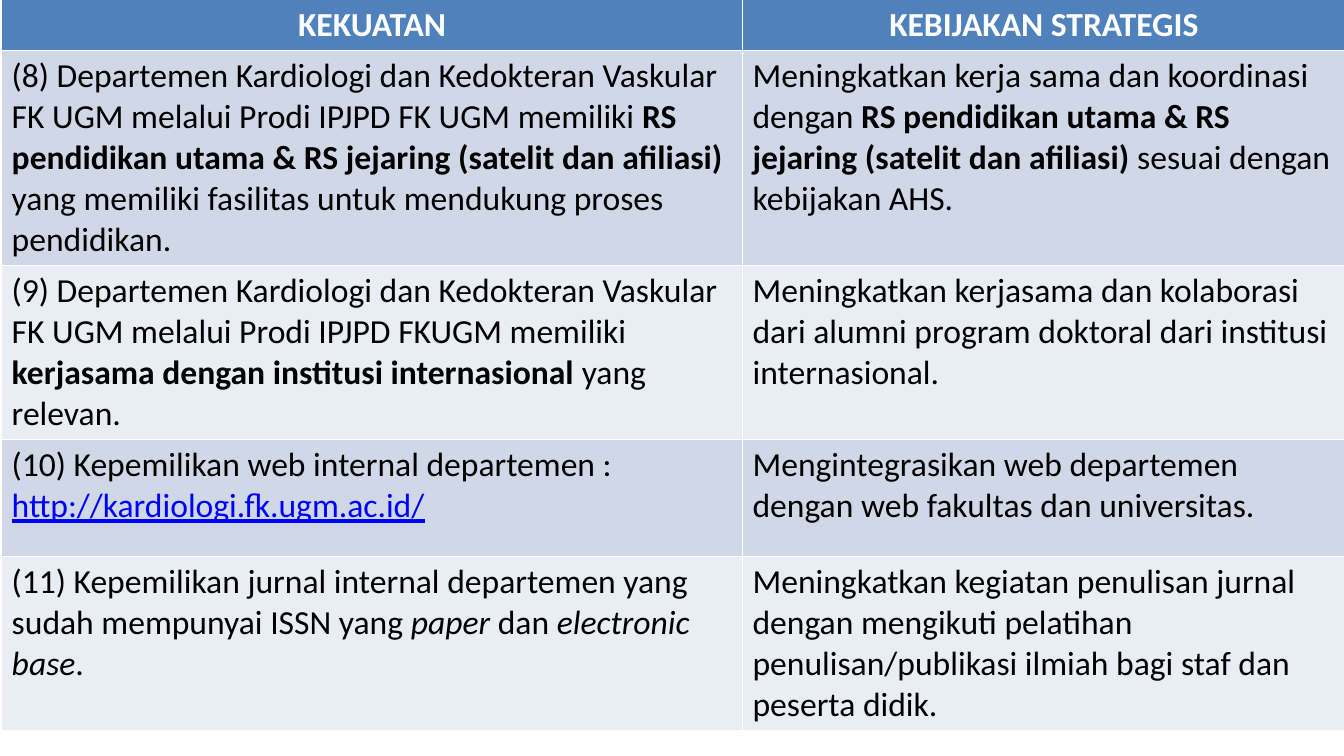
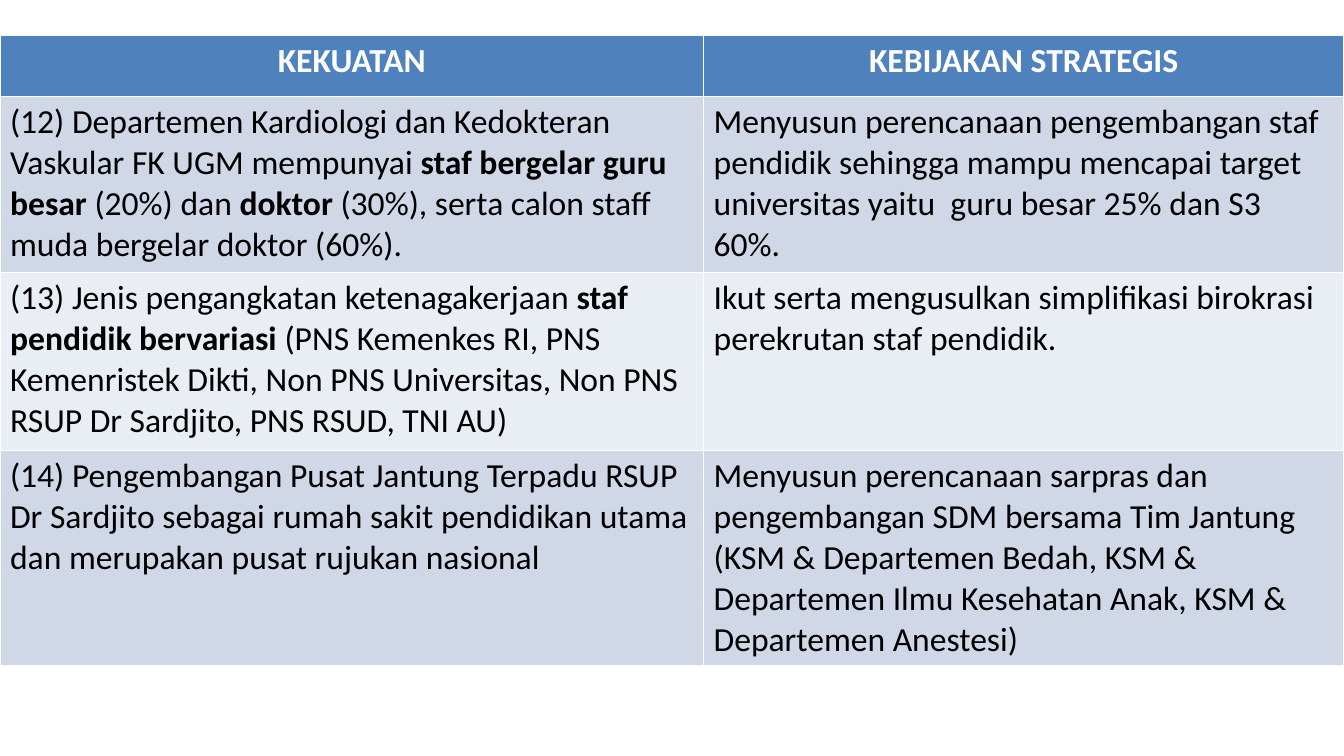
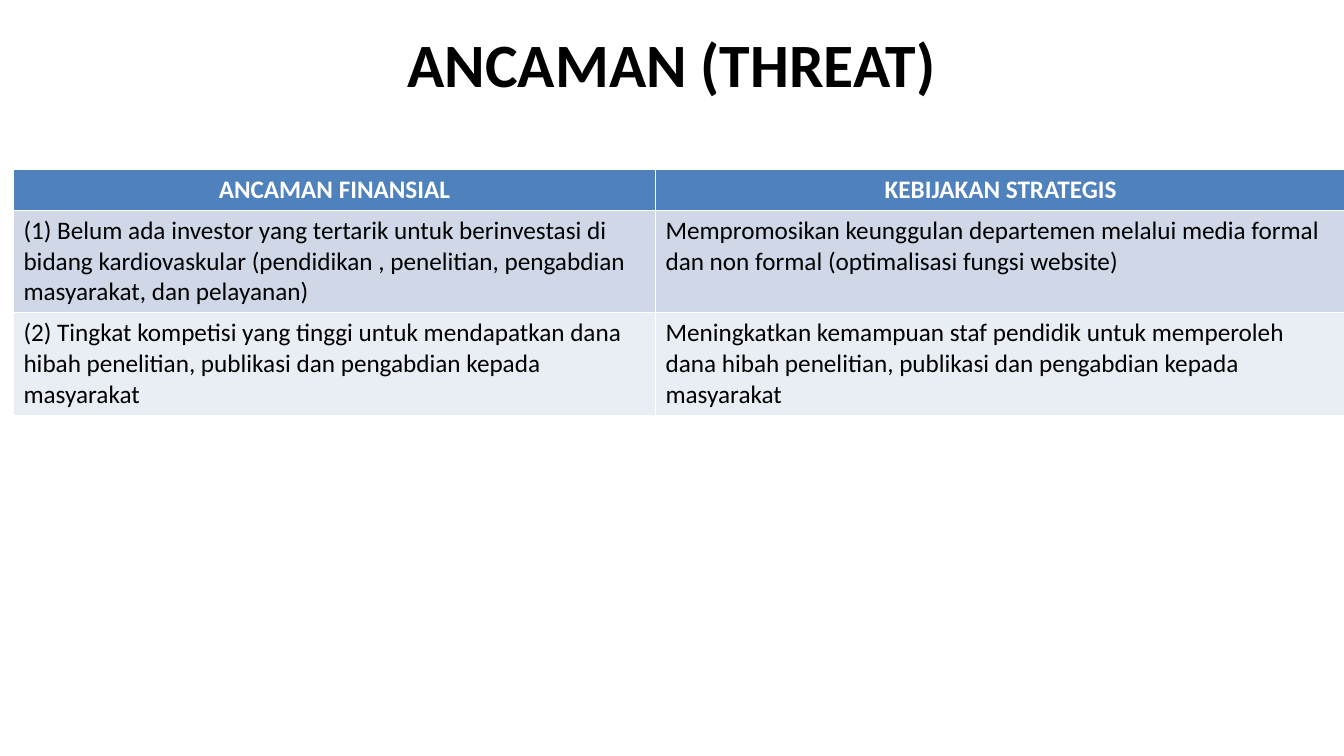
from dataclasses import dataclass

from pptx import Presentation
from pptx.dml.color import RGBColor
from pptx.enum.text import MSO_ANCHOR, PP_ALIGN
from pptx.util import Pt


@dataclass(frozen=True)
class Theme:
    font: str = "Calibri"
    title_size: int = 44
    large_size: int = 24
    small_size: int = 18
    header: RGBColor = RGBColor.from_string("4F81BD")
    bands: tuple = (RGBColor.from_string("D0D8E8"), RGBColor.from_string("E9EDF4"))
    text: RGBColor = RGBColor.from_string("000000")
    header_text: RGBColor = RGBColor.from_string("FFFFFF")
    link: RGBColor = RGBColor.from_string("0000FF")


@dataclass(frozen=True)
class Span:
    text: str
    bold: bool = False
    italic: bool = False
    link: bool = False


def bold(text):
    return Span(text, bold=True)


def italic(text):
    return Span(text, italic=True)


class Deck:
    def __init__(self, theme):
        self.theme = theme
        self.presentation = Presentation()
        self.presentation.slide_width = Pt(960)
        self.presentation.slide_height = Pt(540)
        self.slide = None

    def add_slide(self, title=None):
        layouts = self.presentation.slide_layouts
        layout = layouts.get_by_name("Title Only" if title else "Blank")
        self.slide = self.presentation.slides.add_slide(layout)
        if title:
            self.add_title(title)

    def add_title(self, text):
        shape = self.slide.shapes.title
        shape.left, shape.top, shape.width, shape.height = Pt(48), Pt(0), Pt(864), Pt(90)
        shape.text_frame.vertical_anchor = MSO_ANCHOR.MIDDLE
        self.fill_text(shape.text_frame, text, self.theme.title_size,
                       self.theme.text, True, PP_ALIGN.CENTER)

    def fill_text(self, text_frame, content, size, color, is_bold=False,
                  align=PP_ALIGN.LEFT):
        paragraph = text_frame.paragraphs[0]
        paragraph.alignment = align
        font = paragraph.font
        font.name, font.size, font.bold = self.theme.font, Pt(size), is_bold
        font.color.rgb = color
        for part in (content,) if isinstance(content, str) else content:
            span = Span(part) if isinstance(part, str) else part
            run = paragraph.add_run()
            run.text = span.text
            if span.bold:
                run.font.bold = True
            if span.italic:
                run.font.italic = True
            if span.link:
                run.font.underline = True
                run.font.color.rgb = self.theme.link

    def add_table(self, left, top, widths, heights, rows, size):
        frame = self.slide.shapes.add_table(
            len(rows), len(widths), Pt(left), Pt(top), Pt(sum(widths)), Pt(sum(heights)))
        table = frame.table
        for column, width in zip(table.columns, widths):
            column.width = Pt(width)
        for index, (row, height, contents) in enumerate(zip(table.rows, heights, rows)):
            row.height = Pt(height)
            for cell, content in zip(row.cells, contents):
                cell.fill.solid()
                if index == 0:
                    cell.fill.fore_color.rgb = self.theme.header
                    self.fill_text(cell.text_frame, content, size,
                                   self.theme.header_text, True, PP_ALIGN.CENTER)
                else:
                    cell.fill.fore_color.rgb = self.theme.bands[(index - 1) % 2]
                    self.fill_text(cell.text_frame, content, size, self.theme.text)


STRATEGY = "KEBIJAKAN STRATEGIS"
STRENGTH_HEADER = ("KEKUATAN", STRATEGY)
HOSPITALS = bold("RS pendidikan utama & RS jejaring (satelit dan afiliasi)")

FACILITY_ROWS = [
    STRENGTH_HEADER,
    (("(8) Departemen Kardiologi dan Kedokteran Vaskular FK UGM melalui Prodi IPJPD "
      "FK UGM memiliki ", HOSPITALS,
      " yang memiliki fasilitas untuk mendukung proses pendidikan."),
     ("Meningkatkan kerja sama dan koordinasi dengan ", HOSPITALS,
      " sesuai dengan kebijakan AHS.")),
    (("(9) Departemen Kardiologi dan Kedokteran Vaskular FK UGM melalui Prodi IPJPD "
      "FKUGM memiliki ", bold("kerjasama dengan institusi internasional"),
      " yang relevan."),
     "Meningkatkan kerjasama dan kolaborasi dari alumni program doktoral dari "
     "institusi internasional."),
    (("(10) Kepemilikan web internal departemen : ",
      Span("http://kardiologi.fk.ugm.ac.id/", link=True)),
     "Mengintegrasikan web departemen dengan web fakultas dan universitas."),
    (("(11) Kepemilikan jurnal internal departemen yang sudah mempunyai ISSN yang ",
      italic("paper"), " dan ", italic("electronic base"), "."),
     "Meningkatkan kegiatan penulisan jurnal dengan mengikuti pelatihan "
     "penulisan/publikasi ilmiah bagi staf dan peserta didik."),
]

STAFF_ROWS = [
    STRENGTH_HEADER,
    (("(12) Departemen Kardiologi dan Kedokteran Vaskular FK UGM mempunyai ",
      bold("staf bergelar guru besar"), " (20%) dan ", bold("doktor"),
      " (30%), serta calon staff muda bergelar doktor (60%)."),
     "Menyusun perencanaan pengembangan staf pendidik sehingga mampu mencapai target "
     "universitas yaitu  guru besar 25% dan S3 60%."),
    (("(13) Jenis pengangkatan ketenagakerjaan ", bold("staf pendidik bervariasi"),
      " (PNS Kemenkes RI, PNS Kemenristek Dikti, Non PNS Universitas, Non PNS RSUP "
      "Dr Sardjito, PNS RSUD, TNI AU)"),
     "Ikut serta mengusulkan simplifikasi birokrasi perekrutan staf pendidik."),
    ("(14) Pengembangan Pusat Jantung Terpadu RSUP Dr Sardjito sebagai rumah sakit "
     "pendidikan utama dan merupakan pusat rujukan nasional",
     "Menyusun perencanaan sarpras dan pengembangan SDM bersama Tim Jantung (KSM & "
     "Departemen Bedah, KSM & Departemen Ilmu Kesehatan Anak, KSM & Departemen "
     "Anestesi)"),
]

THREAT_ROWS = [
    ("ANCAMAN FINANSIAL", STRATEGY),
    ("(1) Belum ada investor yang tertarik untuk berinvestasi di bidang kardiovaskular "
     "(pendidikan , penelitian, pengabdian masyarakat, dan pelayanan)",
     "Mempromosikan keunggulan departemen melalui media formal dan non formal "
     "(optimalisasi fungsi website)"),
    ("(2) Tingkat kompetisi yang tinggi untuk mendapatkan dana hibah penelitian, "
     "publikasi dan pengabdian kepada masyarakat",
     "Meningkatkan kemampuan staf pendidik untuk memperoleh dana hibah penelitian, "
     "publikasi dan pengabdian kepada masyarakat"),
]


def main():
    theme = Theme()
    deck = Deck(theme)

    deck.add_slide()
    deck.add_table(1.2, -0.6, (529.2, 430.6), (36.5, 153.5, 124.5, 83.5, 124.5),
                   FACILITY_ROWS, theme.large_size)

    deck.add_slide()
    deck.add_table(0, 25.4, (502.6, 457.4), (43.8, 125.2, 127.4, 153.5),
                   STAFF_ROWS, theme.large_size)

    deck.add_slide("ANCAMAN (THREAT)")
    deck.add_table(9.6, 121, (458.6, 493.2), (29.2, 73.2, 73.2),
                   THREAT_ROWS, theme.small_size)

    deck.presentation.save("out.pptx")


if __name__ == "__main__":
    main()
